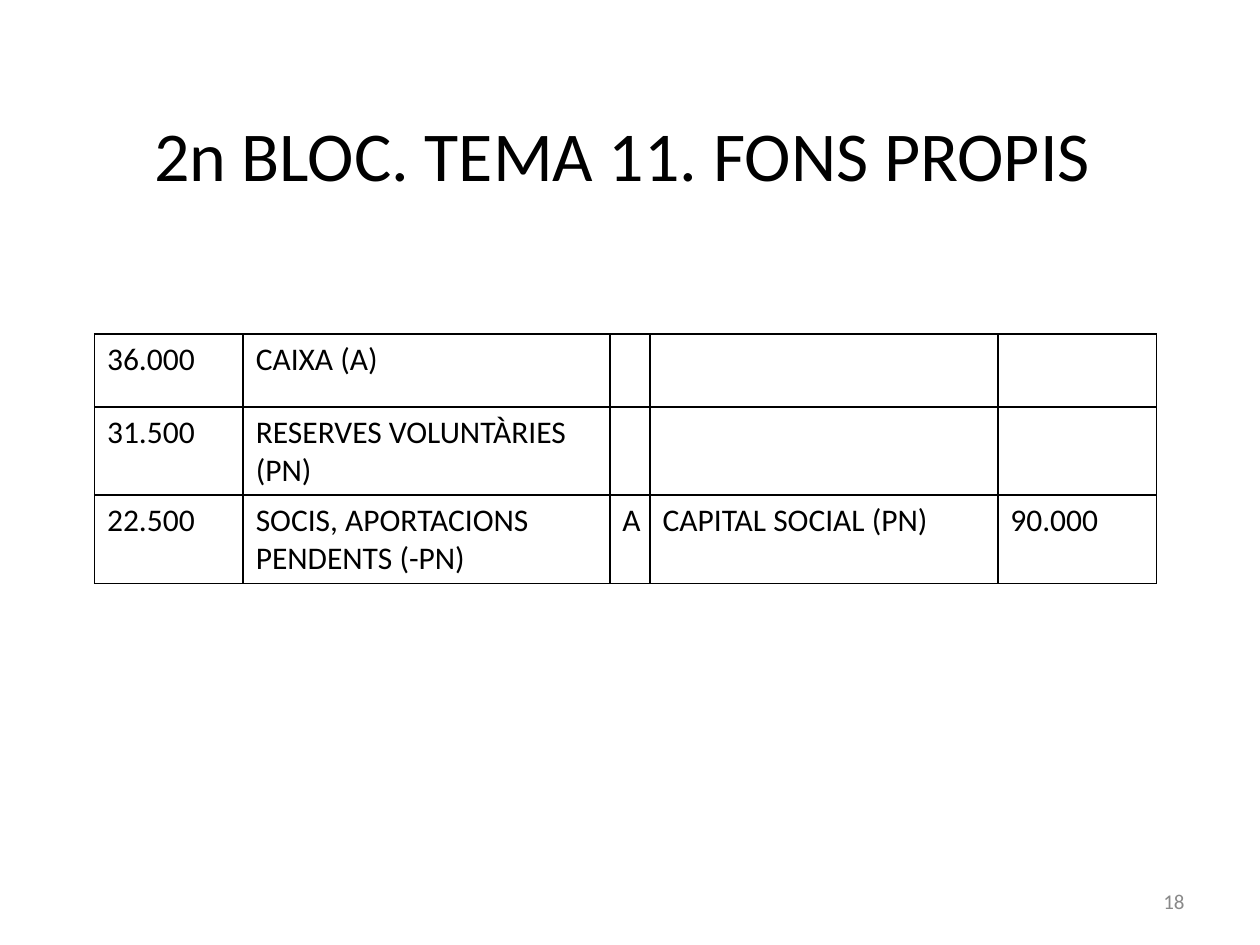
from lxml.etree import SubElement
from pptx import Presentation
from pptx.dml.color import RGBColor
from pptx.enum.text import MSO_ANCHOR, PP_ALIGN
from pptx.oxml.ns import qn
from pptx.util import Inches, Pt

TITLE = "2n BLOC. TEMA 11. FONS PROPIS "
PAGE = "18"
ENTRIES = [
    ("36.000", "CAIXA (A)", "", "", ""),
    ("31.500", "RESERVES VOLUNTÀRIES (PN)", "", "", ""),
    ("22.500", "SOCIS, APORTACIONS PENDENTS (-PN)", "A", "CAPITAL SOCIAL (PN)", "90.000"),
]
COL_WIDTHS = [1.18, 2.91, 0.32, 2.76, 1.26]
ROW_HEIGHTS = [0.58, 0.7, 0.7]
COLORS = {"text": "000000", "page": "898989", "border": "000000"}
FONT = "Calibri"


def write(tf, text, size, color, align=PP_ALIGN.LEFT):
    p = tf.paragraphs[0]
    p.alignment = align
    r = p.add_run()
    r.text = text
    r.font.name = FONT
    r.font.size = Pt(size)
    r.font.color.rgb = RGBColor.from_string(COLORS[color])


def add_borders(cell):
    """Draw a 1 pt line on all four sides; the lines must follow the fill-free tcPr."""
    tcPr = cell._tc.get_or_add_tcPr()
    for side in ("lnL", "lnR", "lnT", "lnB"):
        ln = SubElement(tcPr, qn(f"a:{side}"), w=str(Pt(1)))
        fill = SubElement(ln, qn("a:solidFill"))
        SubElement(fill, qn("a:srgbClr"), val=COLORS["border"])


prs = Presentation()
prs.slide_width, prs.slide_height = Inches(10), Inches(7.5)
slide = prs.slides.add_slide(prs.slide_layouts[5])

title = slide.shapes.title
title.left, title.top = Inches(0.75), Inches(0.55)
title.width, title.height = Inches(8.5), Inches(1.33)
title.text_frame.vertical_anchor = MSO_ANCHOR.MIDDLE
write(title.text_frame, TITLE, 40, "text", PP_ALIGN.CENTER)

page = slide.shapes.add_textbox(Inches(7.17), Inches(6.95), Inches(2.33), Inches(0.4))
page.text_frame.word_wrap = True
page.text_frame.vertical_anchor = MSO_ANCHOR.MIDDLE
write(page.text_frame, PAGE, 12, "page", PP_ALIGN.RIGHT)

table = slide.shapes.add_table(
    len(ENTRIES), len(COL_WIDTHS), Inches(0.75), Inches(2.65),
    Inches(sum(COL_WIDTHS)), Inches(sum(ROW_HEIGHTS))).table
table.first_row = table.horz_banding = False
for col, width in zip(table.columns, COL_WIDTHS):
    col.width = Inches(width)
for row, height, entry in zip(table.rows, ROW_HEIGHTS, ENTRIES):
    row.height = Inches(height)
    for cell, text in zip(row.cells, entry):
        cell.margin_left = cell.margin_right = Inches(0.1)
        cell.margin_top = cell.margin_bottom = Inches(0.05)
        add_borders(cell)
        cell.fill.background()
        if text:
            write(cell.text_frame, text, 18, "text")

prs.save("out.pptx")
